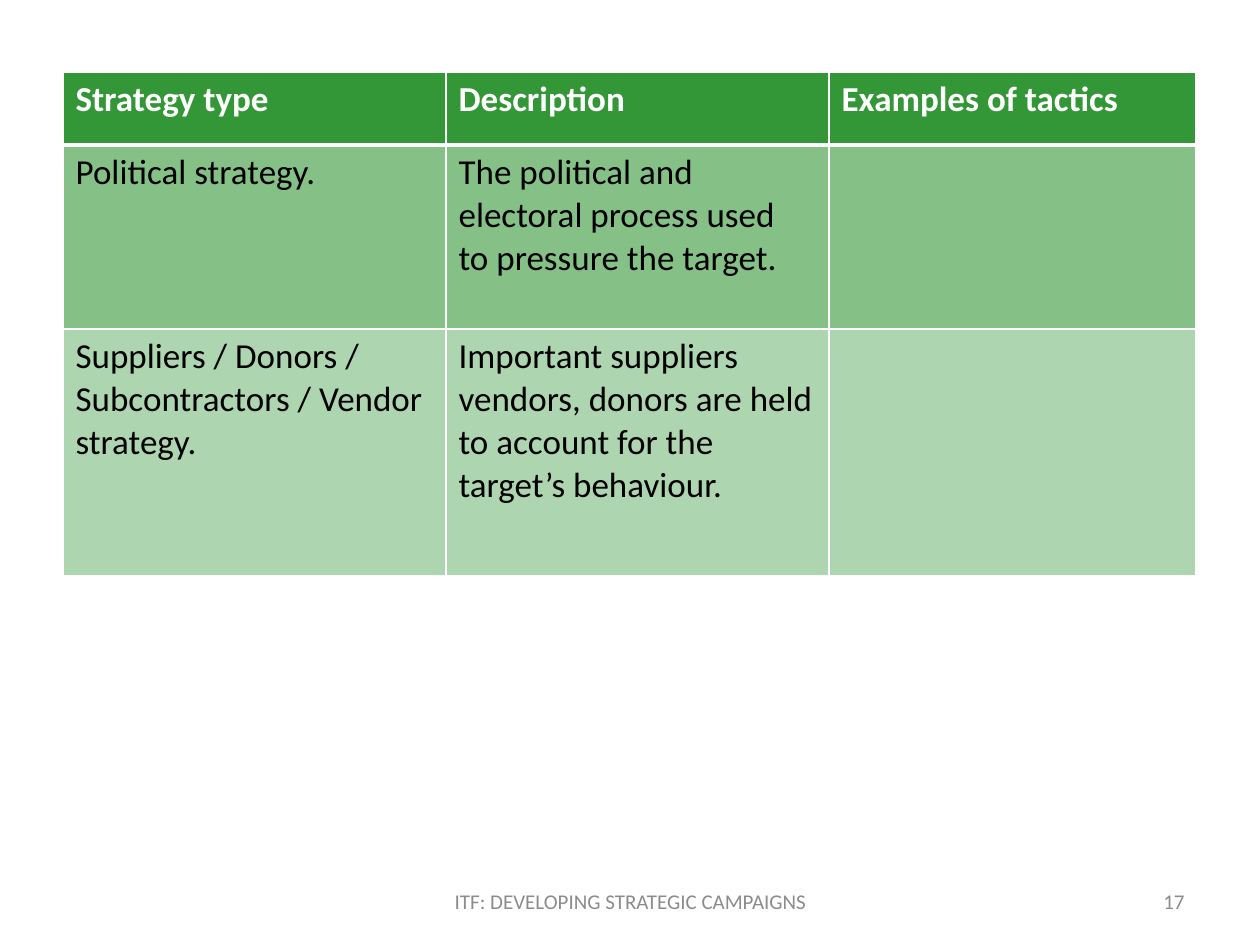
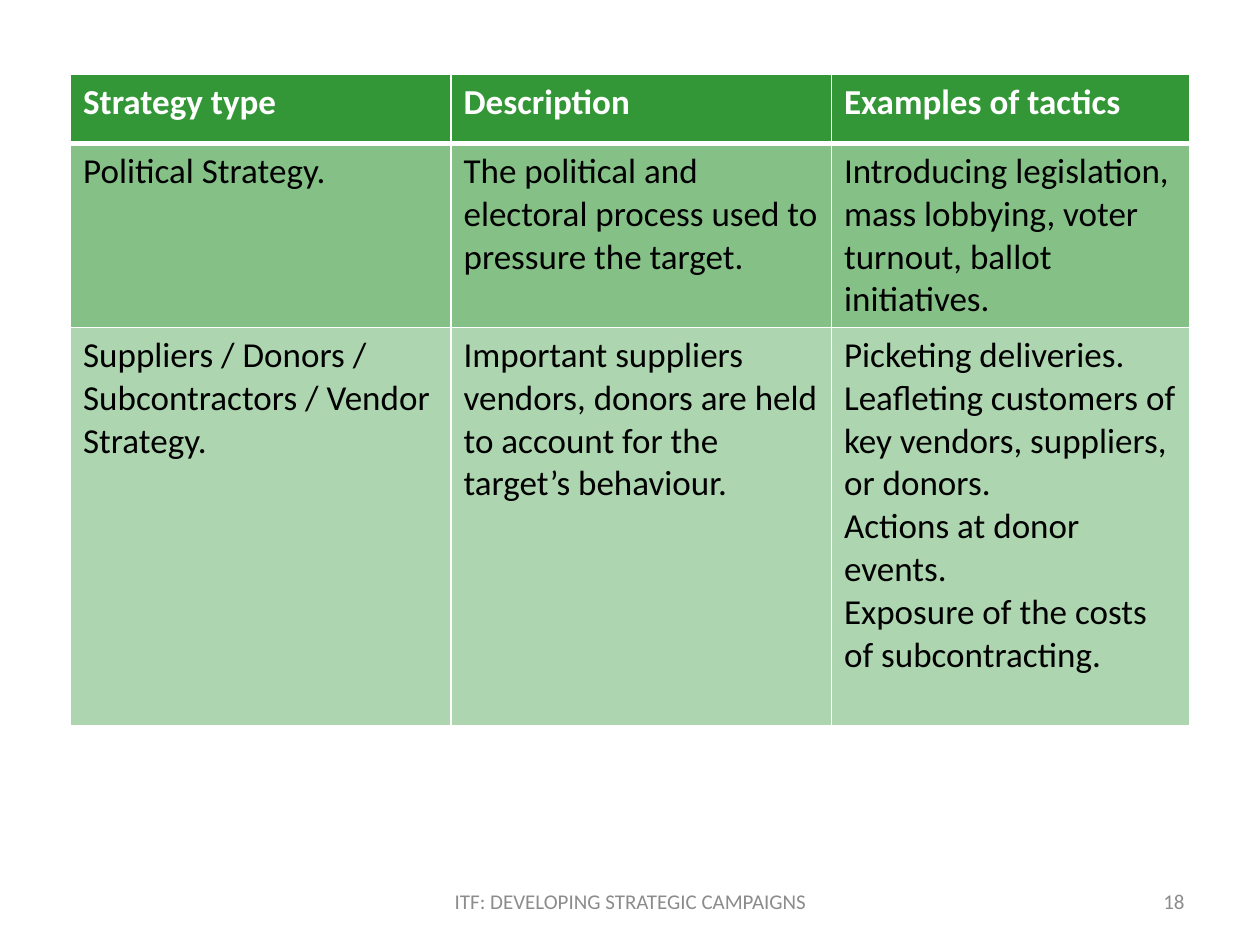
from lxml.etree import SubElement
from pptx import Presentation
from pptx.dml.color import RGBColor
from pptx.enum.text import MSO_ANCHOR, PP_ALIGN
from pptx.oxml.ns import qn
from pptx.util import Inches, Pt

GREEN = RGBColor(0x34, 0x97, 0x37)
WHITE = RGBColor(0xFF, 0xFF, 0xFF)
BLACK = RGBColor(0x00, 0x00, 0x00)
GREY = RGBColor(0x8C, 0x8C, 0x8C)

FOOTER = "ITF: DEVELOPING STRATEGIC CAMPAIGNS"
HEADINGS = ["Strategy type", "Description", "Examples of tactics"]
SUPPLIERS = "Important suppliers vendors, donors are held to account for the target’s behaviour."
ROW_OPACITY = [100, 60, 40]
RULE_WIDTHS = [1, 3, 1, 1]

STRATEGY_SLIDES = [
    {
        "number": "17",
        "corner": (0.5, 0.57),
        "columns": [3.04, 3.04, 2.91],
        "rows": [0.58, 1.46, 1.96],
        "strategies": [
            ["Political strategy.",
             "The political and electoral process used \vto pressure the target.", ""],
            ["Suppliers / Donors / Subcontractors / Vendor strategy.", SUPPLIERS, ""],
        ],
    },
    {
        "number": "18",
        "corner": (0.56, 0.59),
        "columns": [3.02, 3.02, 2.84],
        "rows": [0.55, 1.46, 3.16],
        "strategies": [
            ["Political Strategy.",
             "The political and electoral process used to pressure the target.",
             "Introducing legislation, mass lobbying, voter turnout, ballot initiatives."],
            ["Suppliers / Donors / Subcontractors / Vendor Strategy.", SUPPLIERS,
             "Picketing deliveries. Leafleting customers of key vendors, suppliers, or donors.\n"
             "Actions at donor events.\n"
             "Exposure of the costs of subcontracting."],
        ],
    },
]


def write(frame, text, size, color, bold=False, align=PP_ALIGN.LEFT):
    frame.text = text
    frame.word_wrap = True
    for paragraph in frame.paragraphs:
        paragraph.alignment = align
        font = paragraph.font
        for name, value in {"name": "Calibri", "size": Pt(size), "bold": bold}.items():
            setattr(font, name, value)
            for run in paragraph.runs:
                setattr(run.font, name, value)
        for run in paragraph.runs:
            run.font.color.rgb = color


def paint_cell(cell, opacity, top, bottom):
    properties = cell._tc.get_or_add_tcPr()
    for side, width in {"lnL": 1, "lnR": 1, "lnT": top, "lnB": bottom}.items():
        rule = SubElement(properties, qn(f"a:{side}"), w=str(Pt(width)))
        SubElement(SubElement(rule, qn("a:solidFill")), qn("a:srgbClr"), val=str(WHITE))
    fill = SubElement(properties, qn("a:solidFill"))
    tint = SubElement(fill, qn("a:srgbClr"), val=str(GREEN))
    if opacity < 100:
        SubElement(tint, qn("a:alpha"), val=str(opacity * 1000))


deck = Presentation()
deck.slide_width, deck.slide_height = Inches(10), Inches(7.5)

for content in STRATEGY_SLIDES:
    slide = deck.slides.add_slide(deck.slide_layouts[6])

    for text, left, width, align in [
        (FOOTER, 3.42, 3.17, PP_ALIGN.CENTER),
        (content["number"], 7.17, 2.33, PP_ALIGN.RIGHT),
    ]:
        footer = slide.shapes.add_textbox(Inches(left), Inches(6.95), Inches(width), Inches(0.4))
        footer.text_frame.vertical_anchor = MSO_ANCHOR.MIDDLE
        write(footer.text_frame, text, 12, GREY, align=align)

    left, top = content["corner"]
    columns, rows = content["columns"], content["rows"]
    strategies = slide.shapes.add_table(
        len(rows), len(columns), Inches(left), Inches(top),
        Inches(sum(columns)), Inches(sum(rows))).table
    strategies.horz_banding = False
    for column, width in zip(strategies.columns, columns):
        column.width = Inches(width)
    for row, height in zip(strategies.rows, rows):
        row.height = Inches(height)

    for r, texts in enumerate([HEADINGS] + content["strategies"]):
        for c, text in enumerate(texts):
            cell = strategies.cell(r, c)
            heading = r == 0
            write(cell.text_frame, text, 20, WHITE if heading else BLACK, bold=heading)
            paint_cell(cell, ROW_OPACITY[r], RULE_WIDTHS[r], RULE_WIDTHS[r + 1])

deck.save("out.pptx")
